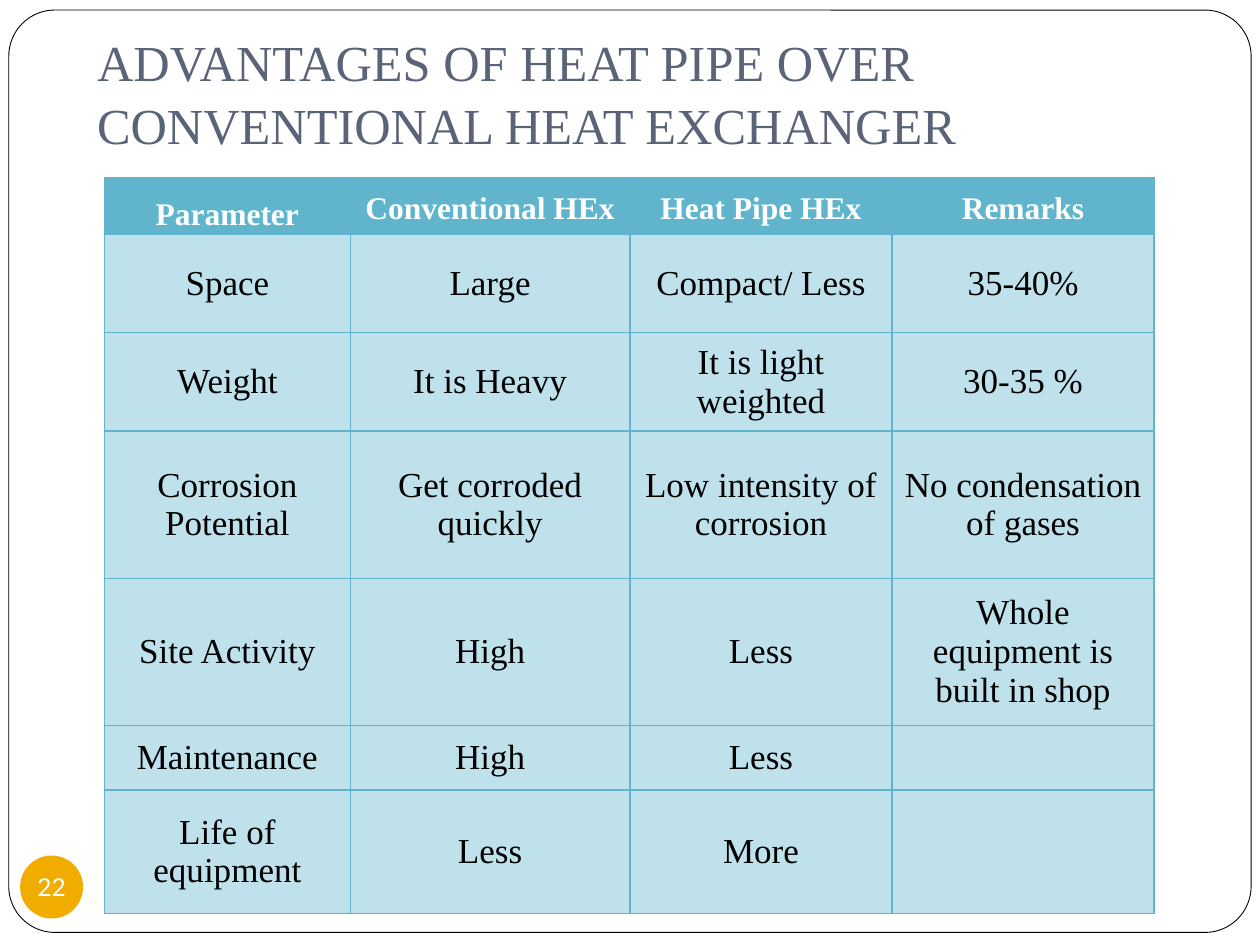
from lxml.etree import SubElement
from pptx import Presentation
from pptx.dml.color import RGBColor
from pptx.enum.shapes import MSO_SHAPE
from pptx.enum.text import MSO_ANCHOR, PP_ALIGN
from pptx.oxml.ns import qn
from pptx.util import Inches, Pt

WIDTH, HEIGHT = 10, 7.5
SERIF, SANS = "Times New Roman", "Lato"
COLORS = {
    "white": "FFFFFF",
    "black": "000000",
    "heading": "5A6378",
    "teal": "60B5CC",
    "pale": "BFE1EB",
    "amber": "F0AD00",
}
COLUMN_WIDTHS = [1.95, 2.22, 2.08, 2.08]
ROW_HEIGHTS = [0.45, 0.78, 0.78, 1.17, 1.17, 0.51, 0.98]
COMPARISON = [
    ["Parameter", "Conventional HEx", "Heat Pipe HEx", "Remarks"],
    ["Space", "Large", "Compact/ Less", "35-40%"],
    ["Weight", "It is Heavy", "It is light weighted", "30-35 %"],
    ["Corrosion Potential", "Get corroded quickly", "Low intensity of corrosion",
     "No condensation of gases"],
    ["Site Activity", "High", "Less", "Whole equipment is built in shop"],
    ["Maintenance", "High", "Less", ""],
    ["Life of equipment", "Less", "More", ""],
]


def color(name):
    return RGBColor.from_string(COLORS[name])


def add_text(paragraph, text, size, font, ink, bold=False, align=PP_ALIGN.CENTER):
    paragraph.alignment = align
    run = paragraph.add_run()
    run.text = text
    run.font.size = Pt(size)
    run.font.name = font
    run.font.bold = bold
    run.font.color.rgb = color(ink)


def set_insets(frame, left, top, right, bottom):
    frame.margin_left, frame.margin_top = Inches(left), Inches(top)
    frame.margin_right, frame.margin_bottom = Inches(right), Inches(bottom)


def add_plain_shape(slide, kind, left, top, width, height, fill):
    shape = slide.shapes.add_shape(
        kind, Inches(left), Inches(top), Inches(width), Inches(height))
    shape.shadow.inherit = False
    shape.fill.solid()
    shape.fill.fore_color.rgb = color(fill)
    shape.line.fill.background()
    return shape


def add_border(slide):
    border = add_plain_shape(
        slide, MSO_SHAPE.ROUNDED_RECTANGLE, 0.07, 0.08, WIDTH - 0.14, 7.32, "white")
    border.adjustments[0] = 0.05
    border.line.color.rgb = color("black")
    border.line.width = Pt(0.5)
    slide.shapes._spTree.insert(2, border._element)


def add_heading(slide, text):
    heading = slide.shapes.title
    heading.left, heading.top = Inches(0.67), Inches(0.5)
    heading.width, heading.height = Inches(0.9 * WIDTH), Inches(0.83)
    frame = heading.text_frame
    frame.word_wrap = True
    frame.vertical_anchor = MSO_ANCHOR.BOTTOM
    set_insets(frame, 0.1, 0.05, 0.1, 0.1)
    paragraph = frame.paragraphs[0]
    paragraph.line_spacing = 1.05
    paragraph.space_before = Pt(0)
    add_text(paragraph, text, 28.8, SERIF, "heading", align=PP_ALIGN.LEFT)


def add_page_number(slide, number):
    badge = add_plain_shape(slide, MSO_SHAPE.OVAL, 0.16, 6.79, 0.5, 0.5, "amber")
    frame = badge.text_frame
    frame.word_wrap = False
    frame.vertical_anchor = MSO_ANCHOR.MIDDLE
    set_insets(frame, 0, 0, 0, 0)
    add_text(frame.paragraphs[0], number, 14, SANS, "white")


def outline_cell(cell):
    properties = cell._tc.get_or_add_tcPr()
    for position, side in enumerate(("lnL", "lnR", "lnT", "lnB")):
        edge = SubElement(properties, qn(f"a:{side}"), w=str(Pt(1)))
        ink = SubElement(edge, qn("a:solidFill"))
        SubElement(ink, qn("a:srgbClr"), val=COLORS["teal"])
        properties.insert(position, edge)


def fill_cell(cell, text, row, column):
    is_header = row == 0
    cell.fill.solid()
    cell.fill.fore_color.rgb = color("teal" if is_header else "pale")
    cell.vertical_anchor = MSO_ANCHOR.MIDDLE
    set_insets(cell, 0.07, 0, 0.07, 0)
    outline_cell(cell)
    if not text:
        return
    paragraph = cell.text_frame.paragraphs[0]
    if is_header:
        paragraph.line_spacing = 1.5 if column == 0 else 1.15
        add_text(paragraph, text, 18, SERIF, "white", bold=True)
    else:
        add_text(paragraph, text, 20, SERIF, "black")


def add_comparison(slide):
    table = slide.shapes.add_table(
        len(ROW_HEIGHTS), len(COLUMN_WIDTHS), Inches(0.83), Inches(1.41),
        Inches(sum(COLUMN_WIDTHS)), Inches(sum(ROW_HEIGHTS))).table
    table.horz_banding = False
    for column, width in zip(table.columns, COLUMN_WIDTHS):
        column.width = Inches(width)
    for row, height in zip(table.rows, ROW_HEIGHTS):
        row.height = Inches(height)
    for row, texts in enumerate(COMPARISON):
        for column, text in enumerate(texts):
            fill_cell(table.cell(row, column), text, row, column)


def main():
    deck = Presentation()
    deck.slide_width, deck.slide_height = Inches(WIDTH), Inches(HEIGHT)
    slide = deck.slides.add_slide(deck.slide_layouts[5])
    add_border(slide)
    add_heading(slide, "ADVANTAGES OF HEAT PIPE OVER CONVENTIONAL HEAT EXCHANGER")
    add_page_number(slide, "22")
    add_comparison(slide)
    deck.save("out.pptx")


if __name__ == "__main__":
    main()
